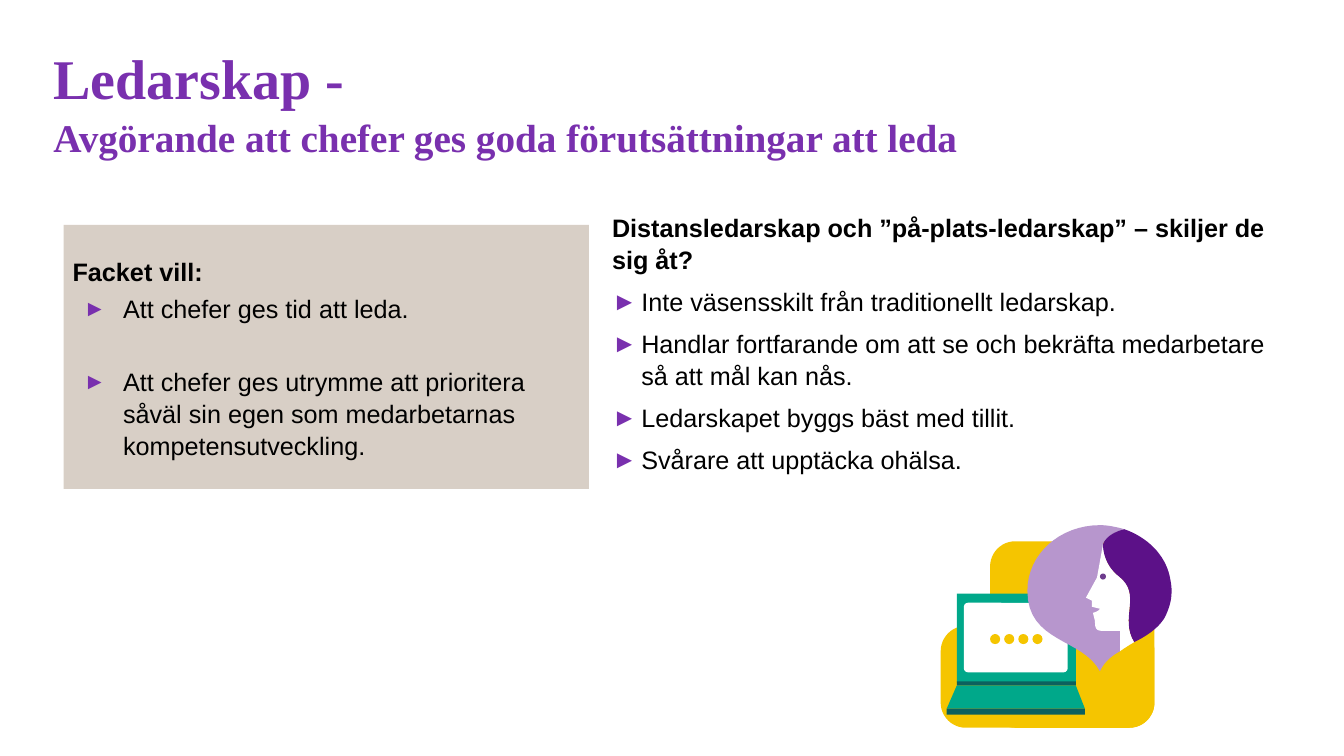
from dataclasses import dataclass

from lxml.etree import SubElement
from pptx import Presentation
from pptx.dml.color import RGBColor
from pptx.enum.shapes import MSO_SHAPE
from pptx.enum.text import MSO_ANCHOR, PP_ALIGN
from pptx.oxml.ns import qn
from pptx.util import Emu, Pt

PX = 9144


@dataclass(frozen=True)
class Theme:
    purple: str = "7930AE"
    black: str = "000000"
    white: str = "FFFFFF"
    sand: str = "D8CFC6"
    yellow: str = "F5C500"
    green: str = "00A88A"
    dark_green: str = "0C605E"
    lilac: str = "B796CD"
    hair: str = "5C1188"
    eye: str = "6D3C8D"
    heading_font: str = "Times New Roman"
    body_font: str = "Arial"
    title_size: int = 40
    subtitle_size: int = 28
    body_size: int = 18


THEME = Theme()


def px(length):
    return Emu(round(length * PX))


def paint(shape, color):
    shape.shadow.inherit = False
    shape.fill.solid()
    shape.fill.fore_color.rgb = RGBColor.from_string(color)
    shape.line.fill.background()
    return shape


def add_preset(page, kind, box, color, radius=0):
    shape = page.shapes.add_shape(kind, *map(px, box))
    if radius:
        shape.adjustments[0] = radius / min(box[2:])
    return paint(shape, color)


def prepare_frame(shape, top_inset=0):
    frame = shape.text_frame
    frame.word_wrap = True
    frame.margin_left = frame.margin_right = frame.margin_bottom = 0
    frame.margin_top = px(top_inset)
    frame.vertical_anchor = MSO_ANCHOR.TOP
    return frame


def write(frame, text, first=False, size=THEME.body_size, font=THEME.body_font,
          color=THEME.black, bold=False, before=0, spacing=1.05,
          left=0, hanging=0, bullet_size=0):
    para = frame.paragraphs[0] if first else frame.add_paragraph()
    para.alignment = PP_ALIGN.LEFT
    para.space_before = Pt(before)
    para.line_spacing = spacing
    properties = para._p.get_or_add_pPr()
    properties.set("marL", str(px(left)))
    properties.set("indent", str(px(-hanging)))
    if bullet_size:
        bullet_color = SubElement(properties, qn("a:buClr"))
        SubElement(bullet_color, qn("a:srgbClr"), val=THEME.purple)
        SubElement(properties, qn("a:buSzPct"), val=str(bullet_size * 1000))
        SubElement(properties, qn("a:buFont"), typeface=THEME.body_font)
        SubElement(properties, qn("a:buChar"), char="►")
    span = para.add_run()
    span.text = text
    span.font.name = font
    span.font.size = Pt(size)
    span.font.bold = bold
    span.font.color.rgb = RGBColor.from_string(color)


def add_title(page, box):
    frame = prepare_frame(page.shapes.add_textbox(*map(px, box)))
    style = dict(font=THEME.heading_font, color=THEME.purple, bold=True)
    write(frame, "Ledarskap -", first=True, size=THEME.title_size, **style)
    write(frame, "Avgörande att chefer ges goda förutsättningar att leda",
          size=THEME.subtitle_size, **style)


def add_vision_panel(page, box):
    panel = add_preset(page, MSO_SHAPE.RECTANGLE, box, THEME.sand)
    frame = prepare_frame(panel, top_inset=30)
    write(frame, "Facket vill:", first=True, bold=True, left=9)
    bullet = dict(left=59, hanging=39, bullet_size=90)
    write(frame, "Att chefer ges tid att leda.", before=3.8, **bullet)
    write(frame, "Att chefer ges utrymme att prioritera såväl sin egen som "
          "medarbetarnas kompetensutveckling.", before=29.3, **bullet)


def add_distance_column(page, box):
    frame = prepare_frame(page.shapes.add_textbox(*map(px, box)))
    write(frame, "Distansledarskap och ”på-plats-ledarskap” – skiljer de sig åt?",
          first=True, bold=True)
    for text in (
        "Inte väsensskilt från traditionellt ledarskap.",
        "Handlar fortfarande om att se och bekräfta medarbetare så att mål kan nås.",
        "Ledarskapet byggs bäst med tillit.",
        "Svårare att upptäcka ohälsa.",
    ):
        write(frame, text, before=7.5, left=29, hanging=29, bullet_size=100)


def flatten(steps, pieces=16):
    points = [steps[0]]
    for step in steps[1:]:
        if len(step) == 2:
            points.append(step)
            continue
        anchors = (points[-1], step[:2], step[2:4], step[4:])
        for piece in range(1, pieces + 1):
            t = piece / pieces
            weights = ((1 - t) ** 3, 3 * t * (1 - t) ** 2, 3 * t * t * (1 - t), t ** 3)
            points.append(tuple(sum(w * anchor[axis] for w, anchor in zip(weights, anchors))
                                for axis in (0, 1)))
    return points


def add_outline(page, origin, steps, color):
    points = [(px(origin[0] + x), px(origin[1] + y)) for x, y in flatten(steps)]
    builder = page.shapes.build_freeform(*points[0], scale=1.0)
    builder.add_line_segments(points[1:], close=True)
    paint(builder.convert_to_shape(), color)


def add_laptop(page, box):
    left, top, width, height = box
    screen = width - 19
    add_preset(page, MSO_SHAPE.RECTANGLE, (left + 10, top, screen, 88), THEME.green)
    add_outline(page, (left, top),
                [(10, 91), (10 + screen, 91), (width, 114), (0, 114)], THEME.green)
    add_preset(page, MSO_SHAPE.RECTANGLE, (left, top + 114, width, height - 114),
               THEME.dark_green)
    add_preset(page, MSO_SHAPE.ROUNDED_RECTANGLE, (left + 17, top + 9, 103, 69),
               THEME.white, radius=4)
    add_preset(page, MSO_SHAPE.RECTANGLE, (left + 10, top + 87, screen, 4), THEME.dark_green)
    for dot in range(4):
        add_preset(page, MSO_SHAPE.OVAL, (left + 43 + 14 * dot, top + 40, 10, 10),
                   THEME.yellow)


def add_head(page, box):
    left, top = box[:2]
    add_outline(page, (left, top), [
        (96, 4), (89, 2, 80, 0, 72, 0), (32, 0, 0, 29, 0, 65),
        (0, 117, 55, 112, 72, 145), (76, 136, 83, 130, 92, 125),
        (92, 105), (75, 19), (77, 13, 84, 7, 96, 4)], THEME.lilac)
    add_outline(page, (left, top), [
        (91, 51), (78, 41, 75, 27, 75, 19), (69, 52), (58, 72), (64, 75), (64, 81),
        (72, 83), (70, 86, 65, 87, 65, 87), (67, 95), (67, 103, 68, 105, 76, 105),
        (92, 105), (92, 125), (96, 122, 101, 119, 106, 116),
        (91, 92, 114, 69, 91, 51)], THEME.white)
    add_outline(page, (left, top), [
        (141, 50), (136, 29, 119, 12, 96, 4), (84, 7, 77, 13, 75, 19),
        (75, 27, 78, 41, 91, 51), (114, 69, 91, 92, 106, 116),
        (118, 110, 129, 103, 136, 92), (141, 82, 143, 74, 143, 65),
        (143, 60, 142, 55, 141, 50)], THEME.hair)
    add_preset(page, MSO_SHAPE.OVAL, (left + 72, top + 48, 6, 6), THEME.eye)


def add_illustration(page, box):
    left, top, width, height = box
    right, bottom = left + 212, top + height
    for inset, drop in ((49, 16), (0, 100)):
        add_preset(page, MSO_SHAPE.ROUNDED_RECTANGLE,
                   (left + inset, top + drop, right - left - inset, bottom - top - drop),
                   THEME.yellow, radius=25)
    add_laptop(page, (left + 6, top + 68, 137, 120))
    add_head(page, (left + 86, top, width - 86, 145))


def main():
    deck = Presentation()
    deck.slide_width, deck.slide_height = px(1333), px(750)
    page = deck.slides.add_slide(deck.slide_layouts[6])
    add_title(page, (53, 40, 1217, 142))
    add_distance_column(page, (607, 209, 651, 285))
    add_vision_panel(page, (63, 223, 521, 262))
    add_illustration(page, (933, 521, 229, 201))
    deck.save("out.pptx")


if __name__ == "__main__":
    main()
